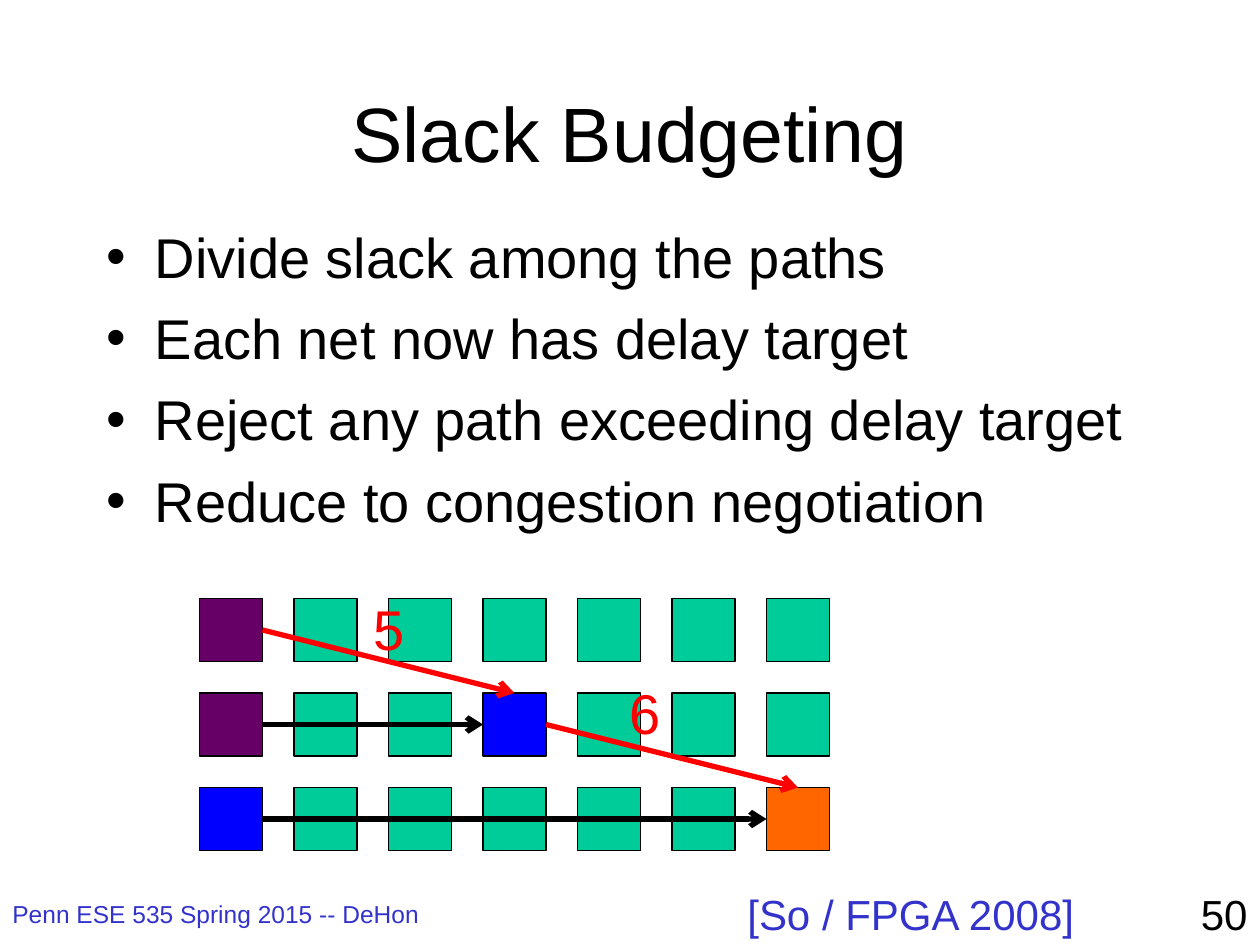
"""Build the Slack Budgeting slide on a grid of 120 columns by 90 rows."""
from lxml import etree
from pptx import Presentation, util as u
from pptx.dml.color import RGBColor
from pptx.enum import shapes, text
from pptx.oxml import ns

THEME = {
    "font": "Arial",
    "black": "000000", "link": "3333CC", "red": "FF0000",
    "purple": "660066", "green": "00CC99", "blue": "0000FF", "orange": "FF6600",
    "title": 44, "body": 32, "note": 24, "footer": 14,
    "border": 0.75, "arrow": 3, "gap": 8,
}
COLUMNS, ROWS = 120, 90
BULLETS = [
    "Divide slack among the paths",
    "Each net now has delay target",
    "Reject any path exceeding delay target",
    "Reduce to congestion negotiation",
]
CELL_LEFT, CELL_TOP, CELL_SIZE, CELL_PITCH = 19, 57, 6, 9
CELL_COLORS = {"P": "purple", "G": "green", "B": "blue", "O": "orange"}
CELL_ROWS = ["PGGGGGG", "PGGBGGG", "BGGGGGO"]
TOP, LEFT, RIGHT = 0, 1, 3
NETS = [
    ((0, 0), (1, 3), TOP, "red"),
    ((1, 0), (1, 3), LEFT, "black"),
    ((1, 3), (2, 6), TOP, "red"),
    ((2, 0), (2, 6), LEFT, "black"),
]
TEXTS = [
    (["Slack Budgeting"], (9, 5, 102, 15), "title", "black",
     {"vertical_anchor": text.MSO_ANCHOR.MIDDLE}, {"alignment": text.PP_ALIGN.CENTER}),
    (BULLETS, (9, 20, 102, 54), "body", "black", {"margin_top": u.Inches(0.1)}, {}),
    (["Penn ESE 535 Spring 2015 -- DeHon"], (0, 85, 46, 5), "footer", "link", {}, {}),
    (["50"], (95, 84, 25, 6), "note", "black", {}, {"alignment": text.PP_ALIGN.RIGHT}),
    (["[So / FPGA 2008]"], (70, 84, 33.8, 6), "note", "link",
     {"word_wrap": False, "auto_size": text.MSO_AUTO_SIZE.SHAPE_TO_FIT_TEXT}, {}),
]
LABELS = [("5", 34.4, 56), ("6", 58.8, 64)]

presentation = Presentation()
presentation.slide_width, presentation.slide_height = u.Inches(10), u.Inches(7.5)
slide = presentation.slides.add_slide(presentation.slide_layouts[6])


def place(left, top, width, height):
    across = presentation.slide_width / COLUMNS
    down = presentation.slide_height / ROWS
    return [u.Emu(round(n)) for n in (left * across, top * down, width * across, height * down)]


def color(name):
    return RGBColor.from_string(THEME[name])


def apply(target, values):
    for name, value in values.items():
        setattr(target, name, value)


def add_bullet(paragraph):
    properties = paragraph._p.get_or_add_pPr()
    properties.set("marL", str(u.Inches(0.38)))
    properties.set("indent", str(u.Inches(-0.38)))
    etree.SubElement(properties, ns.qn("a:buFont")).set("typeface", THEME["font"])
    etree.SubElement(properties, ns.qn("a:buChar")).set("char", "•")


def add_text(lines, box, size, ink, frame_format, paragraph_format):
    frame = slide.shapes.add_textbox(*place(*box)).text_frame
    apply(frame, {"word_wrap": True, **frame_format})
    for index, line in enumerate(lines):
        paragraph = frame.add_paragraph() if index else frame.paragraphs[0]
        paragraph.text = line
        if len(lines) > 1:
            add_bullet(paragraph)
        if index:
            paragraph.space_before = u.Pt(THEME["gap"])
        apply(paragraph, paragraph_format)
        font = paragraph.runs[0].font
        apply(font, {"name": THEME["font"], "size": u.Pt(THEME[size])})
        font.color.rgb = color(ink)


def add_cell(row, column, fill):
    box = place(CELL_LEFT + column * CELL_PITCH, CELL_TOP + row * CELL_PITCH, CELL_SIZE, CELL_SIZE)
    cell = slide.shapes.add_shape(shapes.MSO_SHAPE.RECTANGLE, *box)
    cell.shadow.inherit = False
    cell.fill.solid()
    cell.fill.fore_color.rgb = color(fill)
    cell.line.color.rgb = color("black")
    cell.line.width = u.Pt(THEME["border"])
    return cell


def add_net(source, target, side, ink):
    net = slide.shapes.add_connector(shapes.MSO_CONNECTOR.STRAIGHT, 0, 0, 0, 0)
    net.begin_connect(source, RIGHT)
    net.end_connect(target, side)
    net.line.color.rgb = color(ink)
    net.line.width = u.Pt(THEME["arrow"])
    etree.SubElement(net.line._get_or_add_ln(), ns.qn("a:tailEnd")).set("type", "arrow")
    etree.SubElement(net._element.spPr, ns.qn("a:effectLst"))


for entry in TEXTS:
    add_text(*entry)
cells = {
    (row, column): add_cell(row, column, CELL_COLORS[kind])
    for row, kinds in enumerate(CELL_ROWS)
    for column, kind in enumerate(kinds)
}
for source, target, side, ink in NETS:
    add_net(cells[source], cells[target], side, ink)
for label, left, top in LABELS:
    add_text([label], (left, top, 7, 7.7), "body", "red",
             {"auto_size": text.MSO_AUTO_SIZE.SHAPE_TO_FIT_TEXT}, {})
presentation.save("out.pptx")
